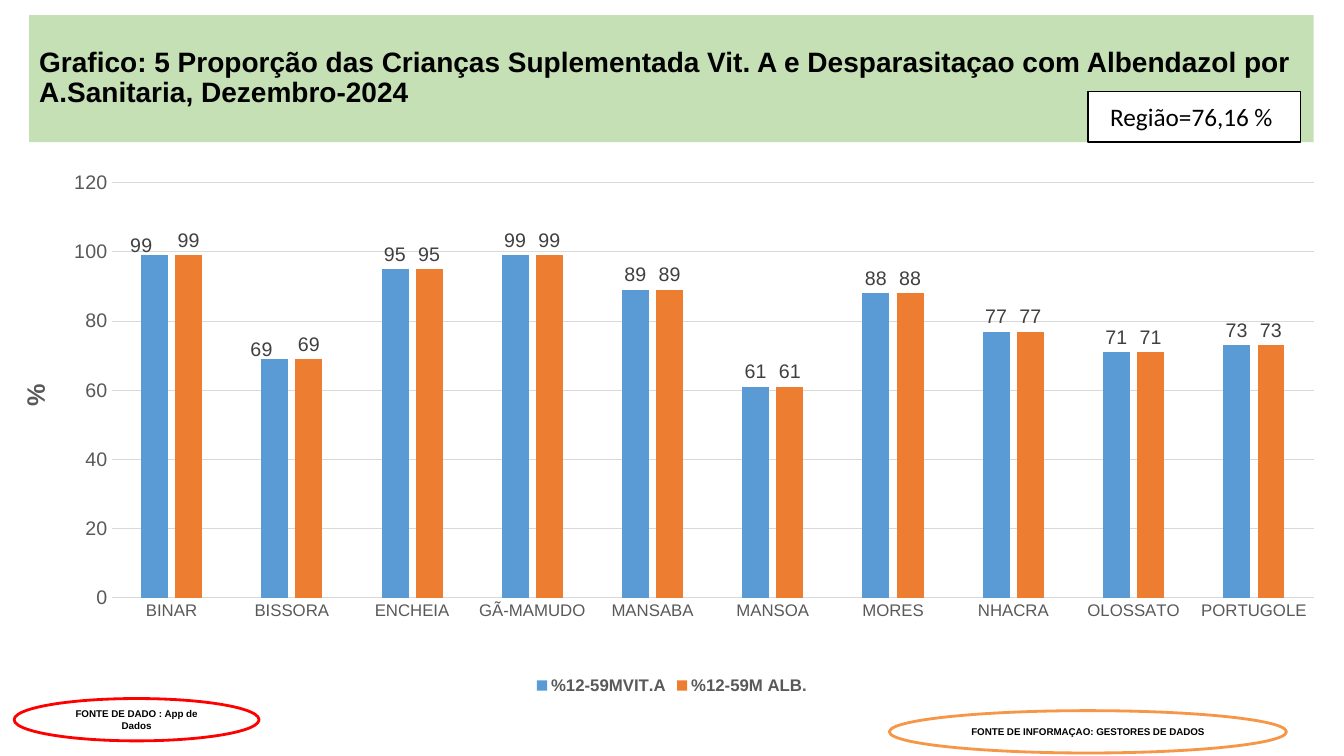
from dataclasses import dataclass

from lxml import etree
from pptx import Presentation
from pptx.chart.data import CategoryChartData
from pptx.dml.color import RGBColor
from pptx.enum.chart import XL_CHART_TYPE as ChartType
from pptx.enum.chart import XL_LABEL_POSITION as LabelPosition
from pptx.enum.chart import XL_LEGEND_POSITION as LegendPosition
from pptx.enum.chart import XL_TICK_MARK as TickMark
from pptx.enum.shapes import MSO_SHAPE as Shape
from pptx.enum.text import MSO_ANCHOR as Anchor
from pptx.enum.text import PP_ALIGN as Align
from pptx.oxml.ns import qn
from pptx.util import Inches, Pt


@dataclass(frozen=True)
class Theme:
    heading_font: str = "Arial"
    body_font: str = "Calibri"
    black: str = "000000"
    white: str = "FFFFFF"
    banner: str = "C5E0B4"
    data_source: str = "FF0000"
    info_source: str = "F79646"
    vitamin: str = "5B9BD5"
    albendazole: str = "ED7D31"
    axis_text: str = "595959"
    label_text: str = "404040"
    grid: str = "D9D9D9"
    title_size: int = 20
    large: int = 18
    values: int = 14
    categories: int = 12
    source: int = 7


AREAS = ["BINAR", "BISSORA", "ENCHEIA", "GÃ-MAMUDO", "MANSABA",
         "MANSOA", "MORES", "NHACRA", "OLOSSATO", "PORTUGOLE"]
COVERAGE = [99, 69, 95, 99, 89, 61, 88, 77, 71, 73]


def set_layout(parent, index, **settings):
    """Put a manual layout at the given child index of a chart element."""
    for old in parent.findall(qn("c:layout")):
        parent.remove(old)
    layout = etree.Element(qn("c:layout"))
    manual = etree.SubElement(layout, qn("c:manualLayout"))
    for tag, value in settings.items():
        etree.SubElement(manual, qn(f"c:{tag}")).set("val", str(value))
    parent.insert(index, layout)


class SlideBuilder:
    def __init__(self, slide, theme):
        self.slide = slide
        self.theme = theme

    def style_font(self, font, size, color, bold=False, name=None):
        font.name = name or self.theme.heading_font
        font.size = Pt(size)
        font.bold = bold
        font.color.rgb = RGBColor.from_string(color)

    def box(self, kind, bounds, text, size, fill=None, line=None, line_width=1,
            bold=True, font=None, align=Align.CENTER, spacing=None):
        shape = self.slide.shapes.add_shape(kind, *map(Inches, bounds))
        shape.shadow.inherit = False
        if fill:
            shape.fill.solid()
            shape.fill.fore_color.rgb = RGBColor.from_string(fill)
        else:
            shape.fill.background()
        if line:
            shape.line.color.rgb = RGBColor.from_string(line)
            shape.line.width = Pt(line_width)
        else:
            shape.line.fill.background()
        frame = shape.text_frame
        frame.word_wrap = True
        frame.vertical_anchor = Anchor.MIDDLE
        paragraph = frame.paragraphs[0]
        paragraph.text = text
        paragraph.alignment = align
        paragraph.line_spacing = spacing
        self.style_font(paragraph.font, size, self.theme.black, bold, font)

    def column_chart(self, bounds, categories, series, axis_title):
        """Draw clustered columns; series holds (name, values, colour) tuples."""
        theme = self.theme
        data = CategoryChartData()
        data.categories = categories
        for name, values, _ in series:
            data.add_series(name, values)
        chart = self.slide.shapes.add_chart(
            ChartType.COLUMN_CLUSTERED, *map(Inches, bounds), data).chart
        chart.has_title = False
        self.style_font(chart.font, 10, theme.black, name=theme.body_font)

        plot = chart.plots[0]
        plot.gap_width = 219
        plot.overlap = -27
        plot.vary_by_categories = False
        for column, (_, _, color) in zip(plot.series, series):
            column.format.fill.solid()
            column.format.fill.fore_color.rgb = RGBColor.from_string(color)
            labels = column.data_labels
            labels.show_value = True
            labels.position = LabelPosition.OUTSIDE_END
            self.style_font(labels.font, theme.values, theme.label_text)

        self.style_axes(chart, axis_title)
        chart.has_legend = True
        chart.legend.position = LegendPosition.BOTTOM
        chart.legend.include_in_layout = False
        self.style_font(chart.legend.font, theme.categories, theme.axis_text, True)
        plot_area = chart.element.find(f".//{qn('c:plotArea')}")
        set_layout(plot_area, 0, layoutTarget="inner", xMode="edge", yMode="edge",
                   x=0.074, y=0.031, w=0.914, h=0.78)
        return chart

    def style_axes(self, chart, axis_title):
        theme = self.theme
        grid = RGBColor.from_string(theme.grid)
        areas, percent = chart.category_axis, chart.value_axis
        for axis, size in ((areas, theme.categories), (percent, theme.values)):
            axis.major_tick_mark = axis.minor_tick_mark = TickMark.NONE
            self.style_font(axis.tick_labels.font, size, theme.axis_text)
        percent.minimum_scale, percent.maximum_scale = 0, 120
        percent.major_unit = 20
        percent.format.line.fill.background()
        for line in (areas.format.line, percent.major_gridlines.format.line):
            line.color.rgb = grid
            line.width = Pt(0.75)
        title = percent.axis_title.text_frame.paragraphs[0]
        title.text = axis_title
        self.style_font(title.font, theme.large, theme.axis_text, True)

    def nudge_labels(self, series, indexes, x, y):
        """Shift single value labels by fractions of the chart size."""
        for index in indexes:
            label = series.points[index].data_label
            self.style_font(label.font, self.theme.values, self.theme.label_text)
            label.position = LabelPosition.OUTSIDE_END
        for element in series.data_labels._element.findall(qn("c:dLbl")):
            set_layout(element, 1, x=x, y=y)


def main():
    presentation = Presentation()
    presentation.slide_width = Inches(13.33)
    presentation.slide_height = Inches(7.5)
    theme = Theme()
    builder = SlideBuilder(
        presentation.slides.add_slide(presentation.slide_layouts[6]), theme)

    builder.box(Shape.RECTANGLE, (0.29, 0.15, 12.74, 1.26),
                "Grafico: 5 Proporção das Crianças Suplementada Vit. A e "
                "Desparasitaçao com Albendazol por A.Sanitaria, Dezembro-2024",
                theme.title_size, fill=theme.banner, align=Align.LEFT, spacing=0.9)
    builder.box(Shape.RECTANGLE, (10.79, 0.91, 2.11, 0.5), "Região=76,16 % ",
                theme.large, fill=theme.white, line=theme.black,
                bold=False, font=theme.body_font)
    builder.box(Shape.OVAL, (0.14, 6.93, 2.43, 0.42), "FONTE DE DADO : App de Dados",
                theme.source, line=theme.data_source, line_width=2)
    builder.box(Shape.OVAL, (8.82, 7.05, 3.94, 0.42),
                "FONTE DE INFORMAÇAO: GESTORES DE DADOS",
                theme.source, fill=theme.white, line=theme.info_source, line_width=2)
    chart = builder.column_chart(
        (0.14, 1.65, 13.05, 5.28), AREAS,
        [("%12-59MVIT.A", COVERAGE, theme.vitamin),
         ("%12-59M ALB.", COVERAGE, theme.albendazole)], "%")
    builder.nudge_labels(chart.plots[0].series[0], (0, 1), x=-0.01, y=0.01)
    presentation.save("out.pptx")


if __name__ == "__main__":
    main()
